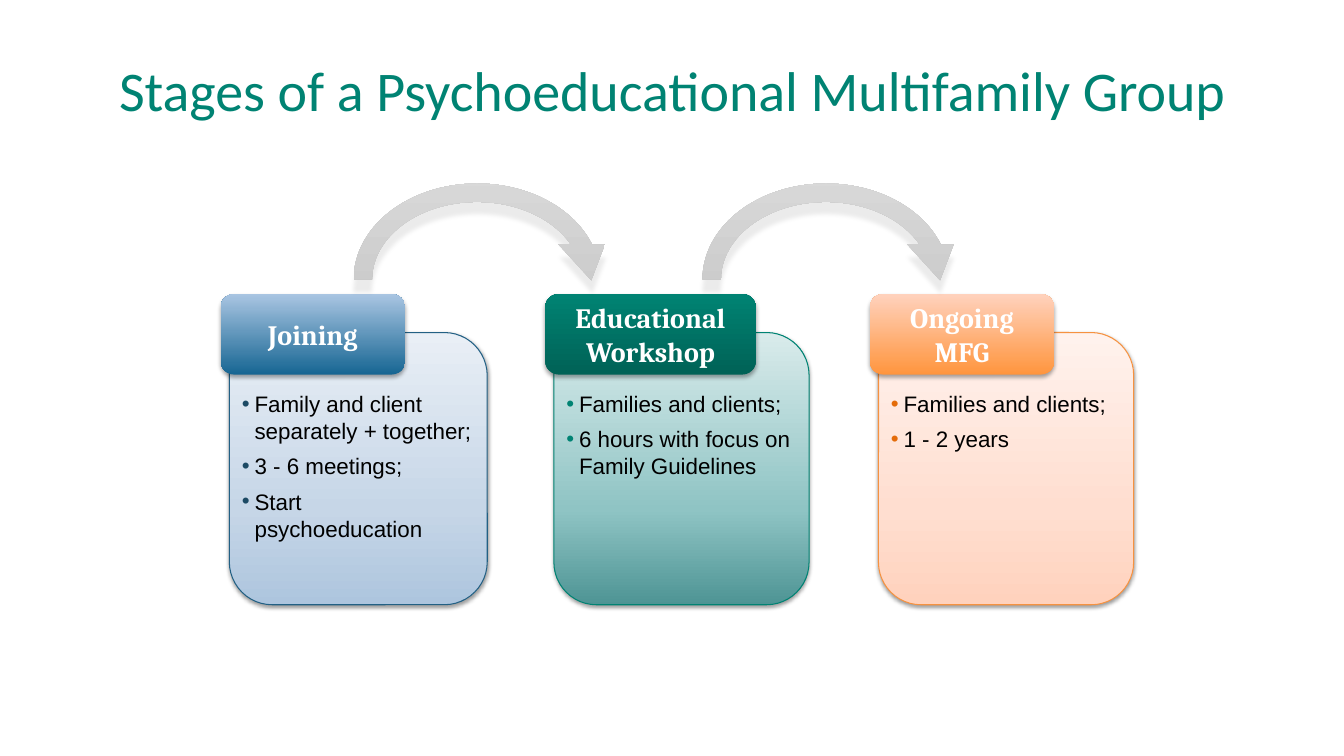
import copy
import pptx
import pptx.dml.color
import pptx.enum.shapes
import pptx.enum.text
import pptx.oxml
import pptx.oxml.ns
import pptx.util

Cm = pptx.util.Cm
Pt = pptx.util.Pt
KIND = pptx.enum.shapes.MSO_SHAPE
ALIGN = pptx.enum.text.PP_ALIGN
ANCHOR = pptx.enum.text.MSO_ANCHOR
NS = pptx.oxml.ns.nsdecls("a")

STAGES = [
    ("Joining",
     ["Family and client separately + together;", "3 - 6 meetings;",
      "Start psychoeducation"],
     6.5, 4.65, "226084", "1C4A64",
     [(0, "ADC5DE"), (0.35, "C6D6E7"), (1, "E9EFF6")],
     [(0, "176693"), (1, "A9C5E2")]),
    ("Educational Workshop",
     ["Families and clients;", "6 hours with focus on Family Guidelines"],
     6.43, 5.31, "008373", "008373",
     [(0, "4E9494"), (0.35, "8FC4C4"), (1, "D9EBEB")],
     [(0, "006256"), (1, "008373")]),
    ("Ongoing MFG",
     ["Families and clients;", "1 - 2 years"],
     6.43, 4.65, "F69240", "E46C0A",
     [(0, "FFD2BD"), (0.35, "FFDED0"), (1, "FFF2ED")],
     [(0, "FF953E"), (1, "FFD2BD")]),
]


def color(code):
    return pptx.dml.color.RGBColor.from_string(code)


def write(para, text, font, size, code, bold=False):
    run = para.add_run()
    run.text = text
    run.font.name = font
    run.font.size = Pt(size)
    run.font.bold = bold
    run.font.color.rgb = color(code)


def blend(shape, stops):
    shape.fill.gradient()
    shape.fill.gradient_angle = 90
    group = shape._element.spPr.xpath("./a:gradFill/a:gsLst")[0]
    for extra in stops[2:]:
        group.append(copy.deepcopy(group[0]))
    for stop, (place, code) in zip(shape.fill.gradient_stops, stops):
        stop.position = place
        stop.color.rgb = color(code)


def shade(shape, alpha, gap):
    shape.shadow.inherit = False
    effect = shape._element.spPr.xpath("./a:effectLst")[0]
    effect.append(pptx.oxml.parse_xml(
        f'<a:outerShdw {NS} blurRad="{Pt(3.1)}" dist="{Pt(gap)}" dir="5400000" '
        f'rotWithShape="0"><a:srgbClr val="000000"><a:alpha val="{alpha * 1000}"/>'
        '</a:srgbClr></a:outerShdw>'))


def block(slide, kind, box, stops, alpha, gap, edge=None):
    shape = slide.shapes.add_shape(kind, *map(Cm, box))
    blend(shape, stops)
    if edge:
        shape.line.color.rgb = color(edge)
        shape.line.width = Pt(0.75)
    else:
        shape.line.fill.background()
    shade(shape, alpha, gap)
    return shape


def bullet(para, code):
    props = para._p.get_or_add_pPr()
    props.set("marL", str(Cm(0.32)))
    props.set("indent", str(Cm(-0.32)))
    for item in (f'<a:buClr {NS}><a:srgbClr val="{code}"/></a:buClr>',
                 f'<a:buFont {NS} typeface="Arial"/>',
                 f'<a:buChar {NS} char="•"/>'):
        props.append(pptx.oxml.parse_xml(item))


def title(slide, box, text):
    frame = slide.shapes.add_textbox(*map(Cm, box)).text_frame
    frame.word_wrap = True
    frame.margin_left = frame.margin_right = 0
    frame.vertical_anchor = ANCHOR.MIDDLE
    para = frame.paragraphs[0]
    para.alignment = ALIGN.CENTER
    para.line_spacing = Pt(42)
    write(para, text, "Calibri", 40, "008373")


def stage(slide, box, name, points, tab, edge, dot, body, head):
    left, top, width, height = box
    card = block(slide, KIND.ROUNDED_RECTANGLE, box, body, 38, 1.6, edge)
    frame = card.text_frame
    frame.word_wrap = True
    frame.vertical_anchor = ANCHOR.TOP
    frame.margin_left = frame.margin_right = 0
    frame.margin_top = Cm(1.14)
    frame.margin_bottom = Cm(0.13)
    for index, point in enumerate(points):
        para = frame.add_paragraph() if index else frame.paragraphs[0]
        para.alignment = ALIGN.LEFT
        para.space_after = Pt(6)
        bullet(para, dot)
        write(para, point, "Arial", 16, "000000")

    label = block(slide, KIND.ROUNDED_RECTANGLE,
                  (left - 0.22, top - 0.97, tab, 2.03), head, 35, 1.8)
    frame = label.text_frame
    frame.word_wrap = True
    frame.vertical_anchor = ANCHOR.MIDDLE
    para = frame.paragraphs[0]
    para.alignment = ALIGN.CENTER
    write(para, name, "Cambria", 20, "FFFFFF", True)


def arrow(slide, box):
    shape = block(slide, KIND.CIRCULAR_ARROW, box,
                  [(0, "BFBFBF"), (1, "D9D9D9")], 8, 9)
    for index, value in enumerate((0.084, 11.423, 204.87, 108, 0.106)):
        shape.adjustments[index] = value


def main():
    deck = pptx.Presentation()
    deck.slide_width = Cm(33.87)
    deck.slide_height = Cm(19.05)
    slide = deck.slides.add_slide(deck.slide_layouts[6])
    title(slide, (1.7, 0.76, 30.48, 3.18),
          "Stages of a Psychoeducational Multifamily Group")
    for index, (name, points, width, *look) in enumerate(STAGES):
        stage(slide, (5.78 + 8.18 * index, 8.38, width, 6.86),
              name, points, *look)
    for index in range(len(STAGES) - 1):
        arrow(slide, (8.56 + 8.79 * index, 4.27, 6.93, 5.54))
    deck.save("out.pptx")


if __name__ == "__main__":
    main()
